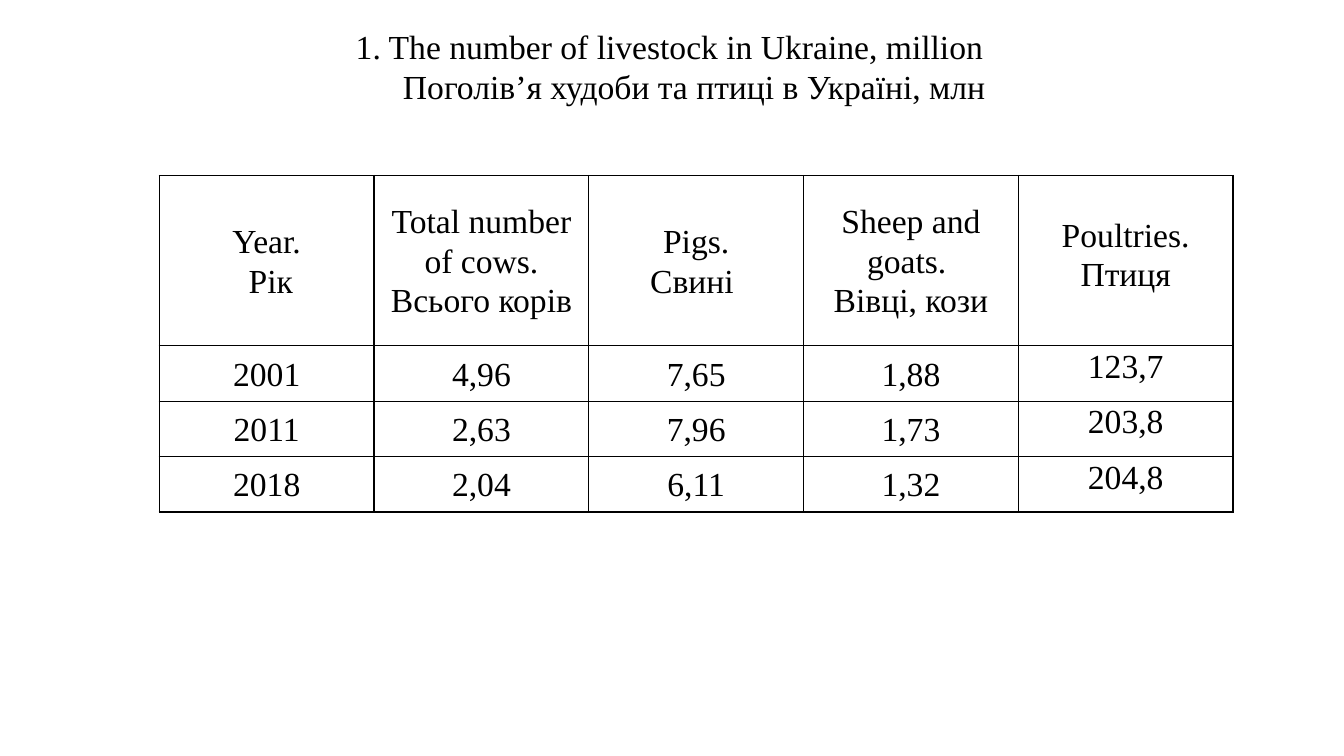
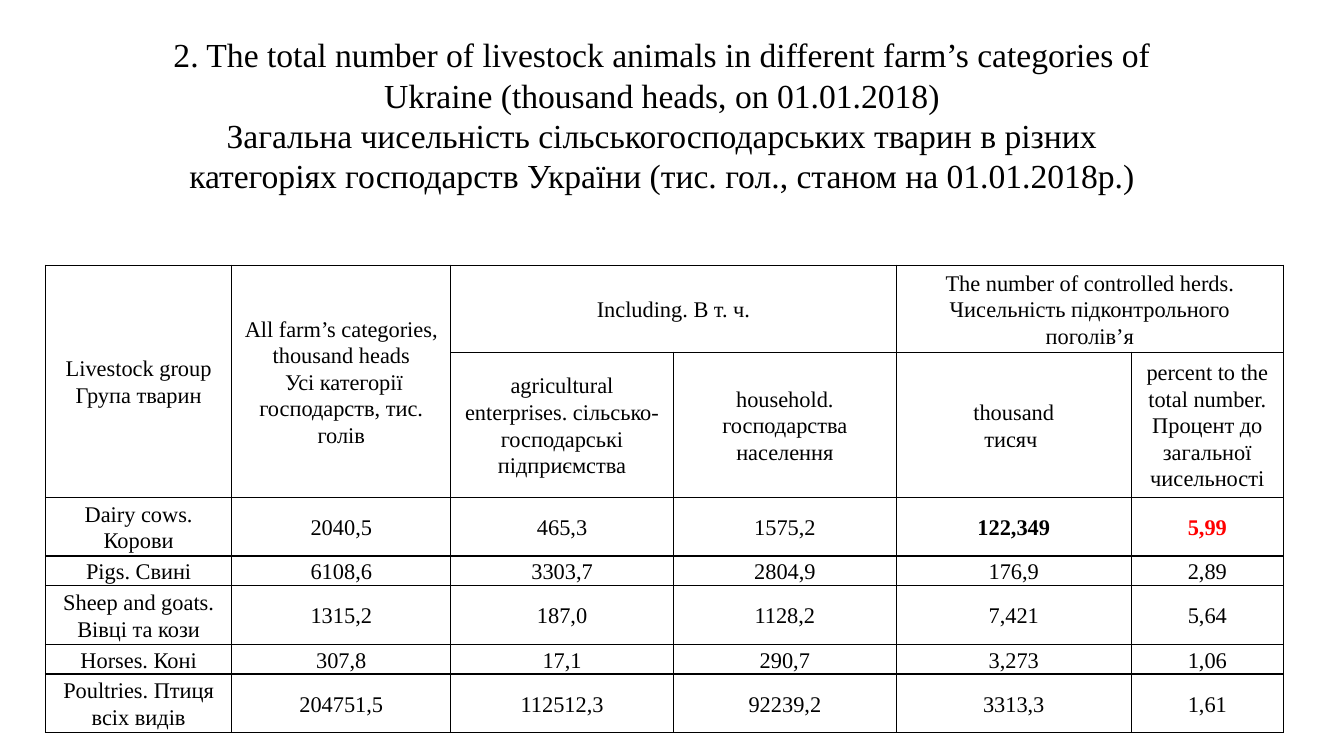
import dataclasses

import lxml.etree
import pptx
import pptx.dml.color
import pptx.enum.text
import pptx.oxml.ns
import pptx.util

EMU_PER_PX = 9144  # 100 px to the inch
MIDDLE = pptx.enum.text.MSO_ANCHOR.MIDDLE
TOP = pptx.enum.text.MSO_ANCHOR.TOP


def px(length):
    return pptx.util.Emu(length * EMU_PER_PX)


@dataclasses.dataclass(frozen=True)
class Theme:
    font: str = "Times New Roman"
    ink: str = "000000"
    accent: str = "FF0000"
    large: int = 24
    small: int = 16
    border: int = 1
    table_spacing: float = 1.07
    side_inset: int = 7


class Deck:
    def __init__(self, theme, width, height):
        self.theme = theme
        self.presentation = pptx.Presentation()
        self.presentation.slide_width = px(width)
        self.presentation.slide_height = px(height)
        self.slide = None

    def new_slide(self):
        self.slide = self.presentation.slides.add_slide(self.presentation.slide_layouts[6])

    def set_text(self, text_frame, text, size, color=None, bold=False, spacing=None):
        """Set centred text, one paragraph per line."""
        text_frame.text = text
        for paragraph in text_frame.paragraphs:
            paragraph.alignment = pptx.enum.text.PP_ALIGN.CENTER
            if spacing:
                paragraph.line_spacing = spacing
            for run in paragraph.runs:
                run.font.name = self.theme.font
                run.font.size = pptx.util.Pt(size)
                run.font.bold = bold
                run.font.color.rgb = pptx.dml.color.RGBColor.from_string(color or self.theme.ink)

    def title(self, box, text, wrap=True, anchor=TOP, last_indent=0):
        text_frame = self.slide.shapes.add_textbox(*map(px, box)).text_frame
        text_frame.word_wrap = wrap
        text_frame.auto_size = pptx.enum.text.MSO_AUTO_SIZE.SHAPE_TO_FIT_TEXT
        text_frame.vertical_anchor = anchor
        self.set_text(text_frame, text, self.theme.large)
        if last_indent:
            properties = text_frame.paragraphs[-1]._p.get_or_add_pPr()
            properties.set("indent", str(px(last_indent)))

    def outline(self, cell):
        qn = pptx.oxml.ns.qn
        properties = cell._tc.get_or_add_tcPr()
        for side in ("lnL", "lnR", "lnT", "lnB"):
            line = lxml.etree.SubElement(properties, qn("a:" + side),
                                         w=str(pptx.util.Pt(self.theme.border)))
            fill = lxml.etree.SubElement(line, qn("a:solidFill"))
            lxml.etree.SubElement(fill, qn("a:srgbClr"), val=self.theme.ink)

    def table(self, left, top, widths, heights, rows, size,
              top_inset=0, spans=(), bold_colors=None, cell_layouts=None):
        """Add a bordered table.

        spans holds pairs of corner cells; bold_colors maps a cell to the colour
        of its bold text; cell_layouts maps a cell to its anchor and top inset.
        """
        bold_colors = bold_colors or {}
        cell_layouts = cell_layouts or {}
        table = self.slide.shapes.add_table(
            len(heights), len(widths), px(left), px(top),
            px(sum(widths)), px(sum(heights))).table
        table.first_row = table.horz_banding = False
        for column, width in zip(table.columns, widths):
            column.width = px(width)
        for row, height in zip(table.rows, heights):
            row.height = px(height)
        for first, last in spans:
            table.cell(*first).merge(table.cell(*last))
        for row_index, row in enumerate(rows):
            for column_index, text in enumerate(row):
                place = (row_index, column_index)
                cell = table.cell(*place)
                anchor, inset = cell_layouts.get(place, (MIDDLE, top_inset))
                cell.vertical_anchor = anchor
                cell.margin_left = cell.margin_right = px(self.theme.side_inset)
                cell.margin_top, cell.margin_bottom = px(inset), 0
                self.outline(cell)
                cell.fill.background()
                if text:
                    self.set_text(cell.text_frame, text, size, bold_colors.get(place),
                                  place in bold_colors, self.theme.table_spacing)


def livestock_by_year(deck):
    deck.new_slide()
    deck.title((337, 20, 654, 91),
               "1. The number of livestock in Ukraine, million\n"
               "Поголів’я худоби та птиці в Україні, млн",
               wrap=False, anchor=MIDDLE, last_indent=49)
    rows = [
        ("Year.\n Рік", "Total number of cows.\nВсього корів", "Pigs.\nСвині ",
         "Sheep and goats. \nВівці, кози", "Poultries. Птиця"),
        ("2001", "4,96", "7,65", "1,88", "123,7"),
        ("2011", "2,63", "7,96", "1,73", "203,8"),
        ("2018", "2,04", "6,11", "1,32", "204,8"),
    ]
    poultry_layouts = {(row, 4): (TOP, 0) for row in range(1, len(rows))}
    poultry_layouts[0, 4] = (TOP, 39)
    deck.table(158, 174, [213] * 5, [169] + [55] * 3, rows, deck.theme.large,
               cell_layouts=poultry_layouts)


def livestock_by_farm_category(deck):
    deck.new_slide()
    deck.title((158, 29, 997, 172),
               "2. The total number of livestock animals in different farm’s categories of "
               "Ukraine (thousand heads, on 01.01.2018)\n"
               "Загальна чисельність сільськогосподарських тварин в різних "
               "категоріях господарств України (тис. гол., станом на 01.01.2018р.)")
    rows = [
        ("Livestock group Група тварин",
         "All farm’s categories, thousand heads\n Усі категорії господарств, тис. голів",
         "Including. В т. ч.", "",
         "The number of controlled herds. Чисельність підконтрольного поголів’я", ""),
        ("", "", "agricultural enterprises. сільсько-господарські\nпідприємства",
         "household.\nгосподарства населення", "thousand\nтисяч ",
         "percent to the total number.\nПроцент до загальної чисельності"),
        ("Dairy cows. Корови", "2040,5", "465,3", "1575,2", "122,349", "5,99"),
        ("Pigs. Свині", "6108,6", "3303,7", "2804,9", "176,9", "2,89"),
        ("Sheep and goats. Вівці та кози", "1315,2", "187,0", "1128,2", "7,421", "5,64"),
        ("Horses. Коні", "307,8", "17,1", "290,7", "3,273", "1,06"),
        ("Poultries. Птиця всіх видів", "204751,5", "112512,3", "92239,2", "3313,3", "1,61"),
    ]
    deck.table(45, 263, [185, 217, 221, 221, 233, 151], [86, 144, 58, 29, 58, 29, 58],
               rows, deck.theme.small, top_inset=1,
               spans=[((0, 0), (1, 0)), ((0, 1), (1, 1)),
                      ((0, 2), (0, 3)), ((0, 4), (0, 5))],
               bold_colors={(2, 4): deck.theme.ink, (2, 5): deck.theme.accent})


def main():
    deck = Deck(Theme(), 1333, 750)
    livestock_by_year(deck)
    livestock_by_farm_category(deck)
    deck.presentation.save("out.pptx")


if __name__ == "__main__":
    main()
